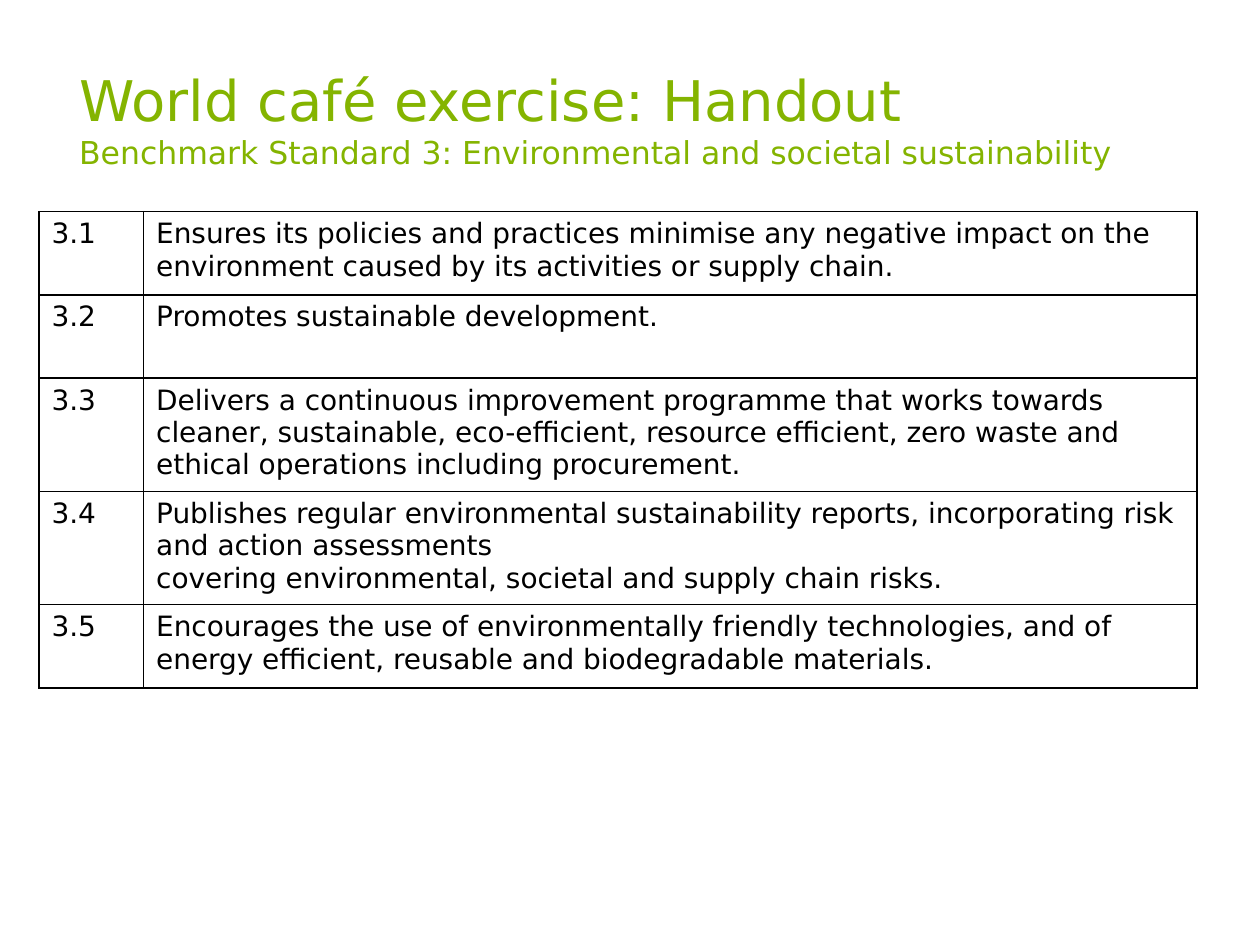
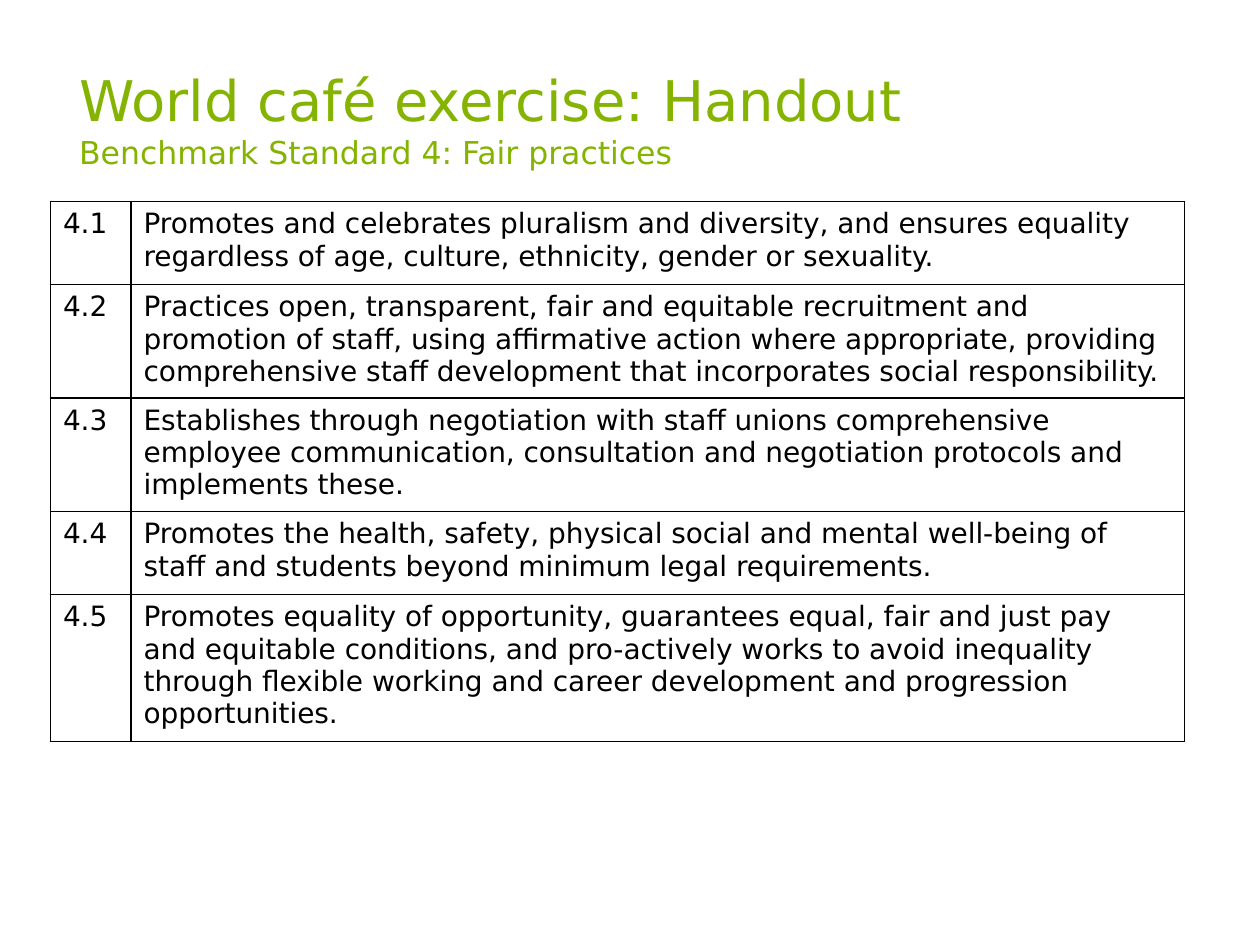
from dataclasses import dataclass

from lxml import etree
from pptx import Presentation
from pptx import util as u
from pptx.dml.color import RGBColor
from pptx.enum import text
from pptx.oxml import ns

PX = u.Inches(1) // 100


@dataclass(frozen=True)
class Theme:
    face: str = "DejaVu Sans"
    green: str = "84B400"
    ink: str = "000000"
    title: int = 32
    sub: int = 18
    body: int = 16
    rule: int = 1


@dataclass(frozen=True)
class Sheet:
    """One handout: its standard, table place in px, and clauses."""
    num: int
    topic: str
    left: int
    top: int
    key: int
    rows: tuple[str, ...]


THEME = Theme()
WIDE, HIGH = 1000, 750
TITLE = (53, 39, 874, 110)
CLAUSE, ROW = 836, 66

SHEETS = (
    Sheet(3, "Environmental and societal sustainability", 31, 168, 83, (
        "Ensures its policies and practices minimise any negative impact on "
        "the environment caused by its activities or supply chain.",
        "Promotes sustainable development.",
        "Delivers a continuous improvement programme that works towards "
        "cleaner, sustainable, eco-efficient, resource efficient, zero waste "
        "and ethical operations including procurement.",
        "Publishes regular environmental sustainability reports, "
        "incorporating risk and action assessments\n"
        "covering environmental, societal and supply chain risks.",
        "Encourages the use of environmentally friendly technologies, and of "
        "energy efficient, reusable and biodegradable materials.",
    )),
    Sheet(4, "Fair practices", 40, 160, 64, (
        "Promotes and celebrates pluralism and diversity, and ensures "
        "equality regardless of age, culture, ethnicity, gender or sexuality.",
        "Practices open, transparent, fair and equitable recruitment and "
        "promotion of staff, using affirmative action where appropriate, "
        "providing comprehensive staff development that incorporates social "
        "responsibility.",
        "Establishes through negotiation with staff unions comprehensive "
        "employee communication, consultation and negotiation protocols and "
        "implements these.",
        "Promotes the health, safety, physical social and mental well-being "
        "of staff and students beyond minimum legal requirements.",
        "Promotes equality of opportunity, guarantees equal, fair and just "
        "pay and equitable conditions, and pro-actively works to avoid "
        "inequality through flexible working and career development and "
        "progression opportunities.",
    )),
)


def px(*sizes: int) -> list[u.Emu]:
    return [u.Emu(size * PX) for size in sizes]


def style(para, color: str) -> None:
    para.font.name = THEME.face
    para.font.color.rgb = RGBColor.from_string(color)


def head(slide, sheet: Sheet) -> None:
    frame = slide.shapes.add_textbox(*px(*TITLE)).text_frame
    frame.word_wrap = True
    frame.vertical_anchor = text.MSO_ANCHOR.MIDDLE
    para = frame.paragraphs[0]
    style(para, THEME.green)
    main = para.add_run()
    main.text = "World café exercise: Handout"
    main.font.size = u.Pt(THEME.title)
    para.add_line_break()
    sub = para.add_run()
    sub.text = f"Benchmark Standard {sheet.num}: {sheet.topic}"
    sub.font.size = u.Pt(THEME.sub)


def frame(cell) -> None:
    """Rule all four sides of a cell; the rules must precede its fill."""
    props = cell._tc.get_or_add_tcPr()
    for side in ("lnL", "lnR", "lnT", "lnB"):
        line = etree.SubElement(props, ns.qn(f"a:{side}"),
                                w=str(u.Pt(THEME.rule)))
        fill = etree.SubElement(line, ns.qn("a:solidFill"))
        etree.SubElement(fill, ns.qn("a:srgbClr"), val=THEME.ink)
    cell.fill.background()


def write(cell, words: str) -> None:
    frame(cell)
    cell.text = words
    for para in cell.text_frame.paragraphs:
        style(para, THEME.ink)
        para.font.size = u.Pt(THEME.body)


def grid(slide, sheet: Sheet) -> None:
    count = len(sheet.rows)
    place = px(sheet.left, sheet.top, sheet.key + CLAUSE, count * ROW)
    table = slide.shapes.add_table(count, 2, *place).table
    table.first_row = table.horz_banding = False
    for col, width in zip(table.columns, px(sheet.key, CLAUSE)):
        col.width = width
    for i, clause in enumerate(sheet.rows):
        write(table.cell(i, 0), f"{sheet.num}.{i + 1}")
        write(table.cell(i, 1), clause)


def main() -> None:
    deck = Presentation()
    deck.slide_width, deck.slide_height = px(WIDE, HIGH)
    for sheet in SHEETS:
        slide = deck.slides.add_slide(deck.slide_layouts[6])
        head(slide, sheet)
        grid(slide, sheet)
    deck.save("out.pptx")


if __name__ == "__main__":
    main()
